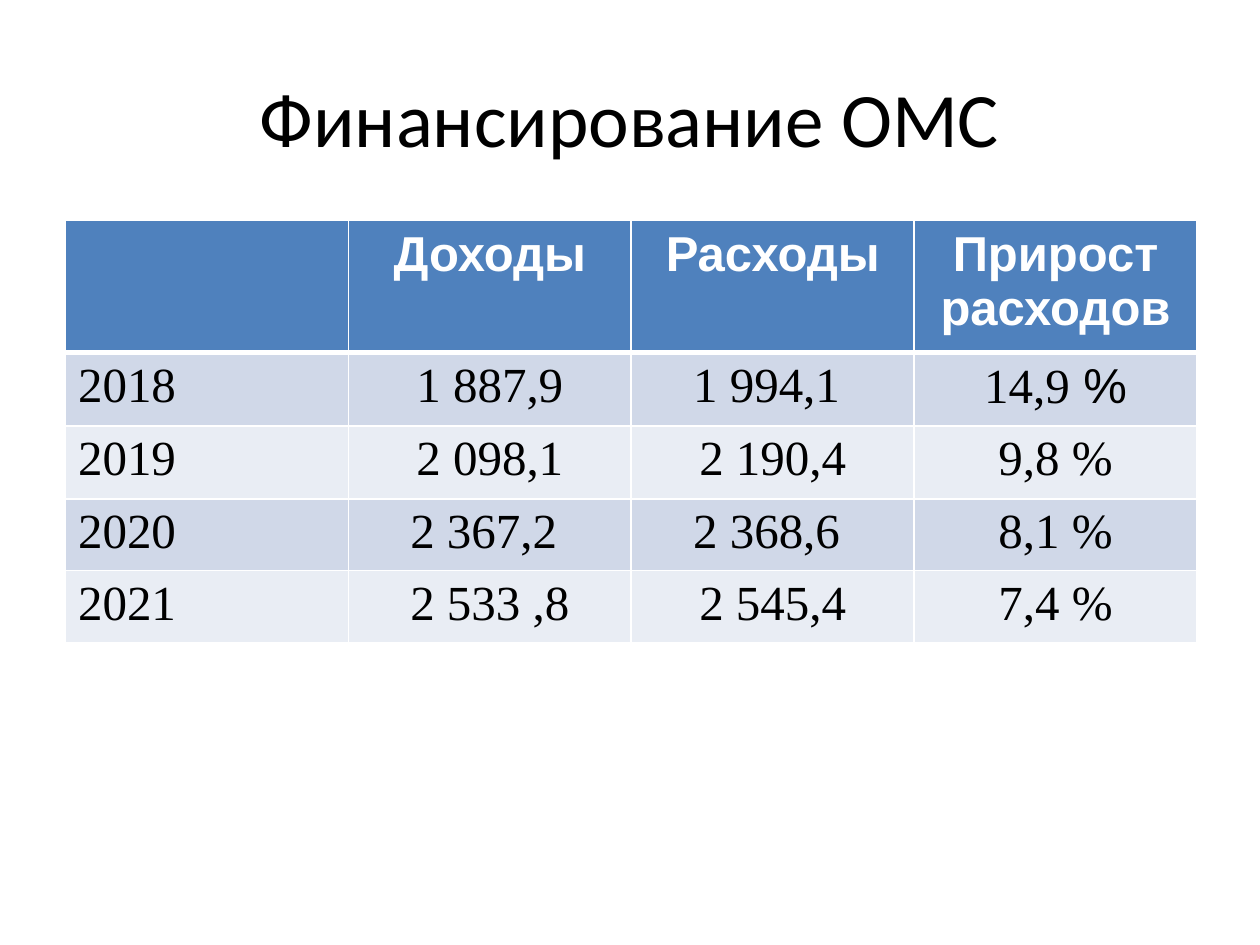
from typing import NamedTuple

from lxml.etree import SubElement
from pptx import Presentation
from pptx.dml.color import RGBColor
from pptx.enum.text import MSO_ANCHOR, PP_ALIGN
from pptx.oxml.ns import qn
from pptx.util import Inches, Pt

WHITE, BLACK = "FFFFFF", "000000"
HEADER_FILL = "4F81BD"
BAND_FILLS = ("D0D8E8", "E9EDF4")
SERIF, SANS = "Times New Roman", "Arial"
COLUMN_WIDTH = 2.245
ROW_HEIGHTS = (1.05, 0.58, 0.58, 0.57, 0.57)


class Style(NamedTuple):
    font: str
    size: int
    color: str
    bold: bool = False


class Year(NamedTuple):
    year: str
    income: str
    expenses: str
    growth: str
    percent_font: str = SERIF


HEADER_STYLE = Style(SANS, 28, WHITE, True)
BODY_STYLE = Style(SERIF, 28, BLACK)
HEADINGS = ("", "Доходы", "Расходы", "Прирост расходов")
YEARS = (
    Year("2018", "1 887,9", "1 994,1 ", "14,9", SANS),
    Year("2019", "2 098,1", "2 190,4", "9,8"),
    Year("2020", "2 367,2 ", "2 368,6 ", "8,1"),
    Year("2021", "2 533 ,8", "2 545,4", "7,4"),
)


def rgb(color: str) -> RGBColor:
    return RGBColor.from_string(color)


def add_run(paragraph, text: str, style: Style) -> None:
    run = paragraph.add_run()
    run.text = text
    run.font.name = style.font
    run.font.size = Pt(style.size)
    run.font.bold = style.bold
    run.font.color.rgb = rgb(style.color)


def set_borders(cell, bottom: int = 1, top: int = 1) -> None:
    """Draw white cell borders; the widths are in points."""
    properties = cell._tc.get_or_add_tcPr()
    for side, width in (("L", 1), ("R", 1), ("T", top), ("B", bottom)):
        line = SubElement(properties, qn(f"a:ln{side}"), w=str(Pt(width)))
        fill = SubElement(line, qn("a:solidFill"))
        SubElement(fill, qn("a:srgbClr"), val=WHITE)


def paint_cell(cell, color: str) -> None:
    cell.fill.solid()
    cell.fill.fore_color.rgb = rgb(color)


def fill_header(table) -> None:
    for column, heading in enumerate(HEADINGS):
        cell = table.cell(0, column)
        set_borders(cell, bottom=3)
        paint_cell(cell, HEADER_FILL)
        if heading:
            paragraph = cell.text_frame.paragraphs[0]
            paragraph.alignment = PP_ALIGN.CENTER
            add_run(paragraph, heading, HEADER_STYLE)


def fill_year(table, row: int, entry: Year) -> None:
    for column, value in enumerate(entry[:4]):
        cell = table.cell(row, column)
        set_borders(cell, top=3 if row == 1 else 1)
        paint_cell(cell, BAND_FILLS[(row - 1) % 2])
        paragraph = cell.text_frame.paragraphs[0]
        paragraph.alignment = PP_ALIGN.CENTER if column else PP_ALIGN.LEFT
        add_run(paragraph, value, BODY_STYLE)
    add_run(paragraph, " %", BODY_STYLE._replace(font=entry.percent_font))


def add_title(slide, text: str) -> None:
    title = slide.shapes.title
    title.left, title.top = Inches(0.5), Inches(0.3)
    title.width, title.height = Inches(9), Inches(1.25)
    title.text_frame.vertical_anchor = MSO_ANCHOR.MIDDLE
    paragraph = title.text_frame.paragraphs[0]
    paragraph.alignment = PP_ALIGN.CENTER
    add_run(paragraph, text, Style("Calibri", 44, BLACK))


def add_funding_table(slide) -> None:
    table = slide.shapes.add_table(
        len(ROW_HEIGHTS), len(HEADINGS), Inches(0.52), Inches(1.75),
        Inches(COLUMN_WIDTH * len(HEADINGS)), Inches(sum(ROW_HEIGHTS))).table
    for row, height in zip(table.rows, ROW_HEIGHTS):
        row.height = Inches(height)
    fill_header(table)
    for number, entry in enumerate(YEARS, start=1):
        fill_year(table, number, entry)


def main() -> None:
    deck = Presentation()
    deck.slide_width, deck.slide_height = Inches(10), Inches(7.5)
    slide = deck.slides.add_slide(deck.slide_layouts[5])
    add_title(slide, "Финансирование ОМС")
    add_funding_table(slide)
    deck.save("out.pptx")


if __name__ == "__main__":
    main()
